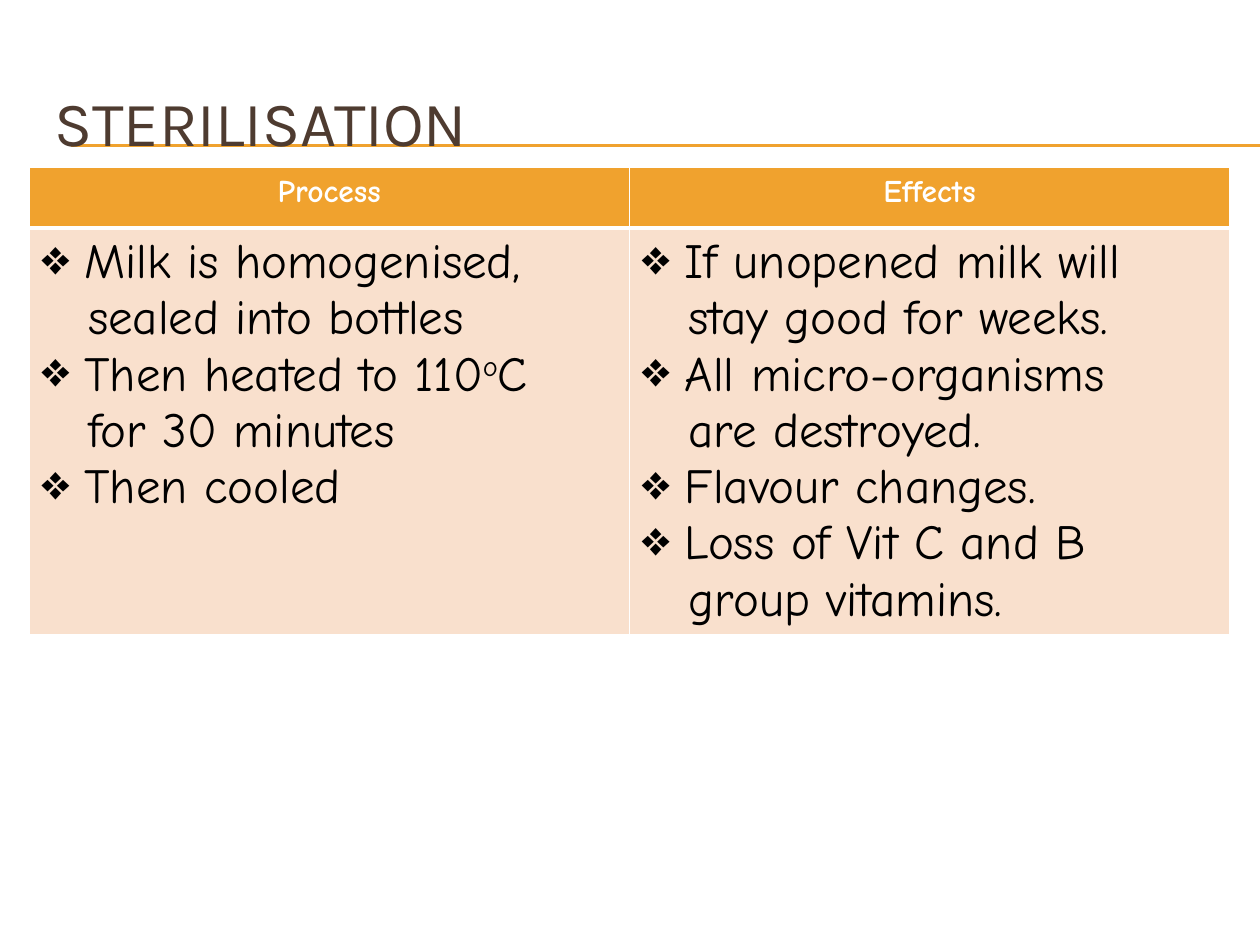
from lxml import etree
from pptx import Presentation
from pptx.dml.color import RGBColor
from pptx.enum.shapes import MSO_CONNECTOR
from pptx.enum.text import MSO_ANCHOR, MSO_AUTO_SIZE, PP_ALIGN
from pptx.oxml.ns import qn
from pptx.util import Inches, Pt

LEFT, CENTER = PP_ALIGN.LEFT, PP_ALIGN.CENTER
MIDDLE, FIXED = MSO_ANCHOR.MIDDLE, MSO_AUTO_SIZE.NONE
STRAIGHT = MSO_CONNECTOR.STRAIGHT

TITLE = "STERILISATION"
TABLE = {
    "Process": [
        ["Milk is homogenised,", "sealed into bottles"],
        ["Then heated to 110^o^C", "for 30 minutes"],
        ["Then cooled"],
    ],
    "Effects": [
        ["If unopened milk will", "stay good for weeks."],
        ["All micro-organisms", "are destroyed."],
        ["Flavour changes."],
        ["Loss of Vit C and B", "group vitamins."],
    ],
}
COLORS = {"gold": "F0A22E", "brown": "4E3B30", "peach": "F9E0CD",
          "white": "FFFFFF", "black": "000000"}
HEAD = {"name": "Comic Neue", "size": Pt(18), "bold": True, "color": "white"}
BODY = {"name": "Comic Neue", "size": Pt(28), "bold": False, "color": "black"}
NAME = {"name": "Karla", "size": Pt(36), "bold": False, "color": "brown"}
ROWS = [0.48, 3.19]
RULES = [1.15, 1.16]
BULLET, HANG, INDENT = "❖", 0.34, 0.37


def paint(color):
    return RGBColor.from_string(COLORS[color])


def write(par, text, style, align=LEFT):
    par.alignment = align
    for i, part in enumerate(text.split("^")):
        run = par.add_run()
        run.text = part
        for key, value in style.items():
            if key == "color":
                run.font.color.rgb = paint(value)
            else:
                setattr(run.font, key, value)
        if i % 2:
            run._r.get_or_add_rPr().set("baseline", "30000")


def indent(par, left, first=0, mark=None):
    props = par._p.get_or_add_pPr()
    props.set("marL", str(Inches(left)))
    props.set("indent", str(Inches(first)))
    if mark:
        etree.SubElement(props, qn("a:buChar")).set("char", mark)
    else:
        etree.SubElement(props, qn("a:buNone"))


def dress(cell, color, base):
    props = cell._tc.get_or_add_tcPr()
    for side, width in {"L": 1, "R": 1, "T": 1, "B": base}.items():
        line = etree.SubElement(props, qn("a:ln" + side), w=str(Pt(width)))
        fill = etree.SubElement(line, qn("a:solidFill"))
        etree.SubElement(fill, qn("a:srgbClr"), val=COLORS["white"])
    cell.fill.solid()
    cell.fill.fore_color.rgb = paint(color)


deck = Presentation()
deck.slide_width, deck.slide_height = Inches(10), Inches(7.5)
slide = deck.slides.add_slide(deck.slide_layouts[5])

for y in RULES:
    rule = slide.shapes.add_connector(
        STRAIGHT, Inches(0.56), Inches(y), Inches(10), Inches(y))
    rule.line.color.rgb = paint("gold")
    rule.line.width = Pt(0.75)
    etree.SubElement(rule._element.spPr, qn("a:effectLst"))

title = slide.shapes.title
slide.shapes._spTree.append(title._element)
box = {"left": 0.33, "top": 0.5, "width": 9.5, "height": 0.92}
for key, value in box.items():
    setattr(title, key, Inches(value))
frame = title.text_frame
frame.auto_size, frame.vertical_anchor = FIXED, MIDDLE
write(frame.paragraphs[0], TITLE, NAME)

table = slide.shapes.add_table(
    len(ROWS), len(TABLE), Inches(0.23), Inches(1.33),
    Inches(9.53), Inches(sum(ROWS))).table
for row, height in zip(table.rows, ROWS):
    row.height = Inches(height)

for col, (head, points) in enumerate(TABLE.items()):
    top, cell = table.cell(0, col), table.cell(1, col)
    dress(top, "gold", 3)
    dress(cell, "peach", 1)
    write(top.text_frame.paragraphs[0], head, HEAD, CENTER)
    lines = [(n, text) for point in points for n, text in enumerate(point)]
    for i, (n, text) in enumerate(lines):
        frame = cell.text_frame
        par = frame.add_paragraph() if i else frame.paragraphs[0]
        write(par, text, BODY)
        if n:
            indent(par, INDENT)
        else:
            indent(par, HANG, -HANG, BULLET)

deck.save("out.pptx")
